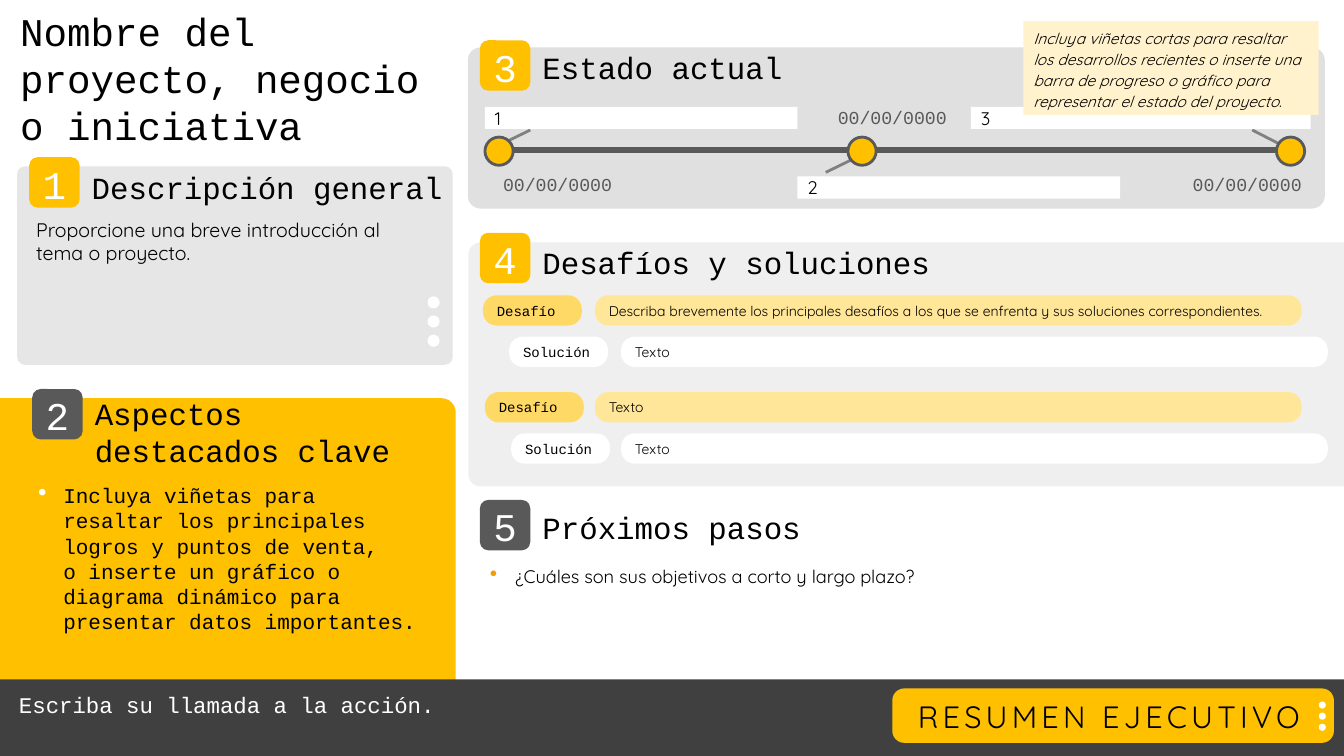
from lxml import etree
from pptx import Presentation
from pptx.dml.color import RGBColor
from pptx.enum import shapes, text
from pptx.oxml.ns import qn

PX = 9144  # 100 px to the inch
MONO, SANS = "Courier New", "Quicksand"
COLORS = {
    "white": "FFFFFF", "black": "000000", "amber": "FFC000", "orange": "F59C00",
    "challenge": "FFD966", "challenge_text": "FFE699", "note": "FFF2CC",
    "bar": "404040", "dark": "595959", "mid": "808080",
    "status": "E0E0E0", "overview": "E7E6E6", "solutions": "EFEFEF",
}
RGB = {name: RGBColor.from_string(value) for name, value in COLORS.items()}
KIND = shapes.MSO_SHAPE
ROUND, RECT, OVAL = KIND.ROUNDED_RECTANGLE, KIND.RECTANGLE, KIND.OVAL
MIDDLE, TOP = text.MSO_ANCHOR.MIDDLE, text.MSO_ANCHOR.TOP
LEFT, CENTER = text.PP_ALIGN.LEFT, text.PP_ALIGN.CENTER

prs = Presentation()
prs.slide_width, prs.slide_height = 1333 * PX, 750 * PX
slide = prs.slides.add_slide(prs.slide_layouts[6])


def block(box, fill=None, kind=RECT, corner=None):
    """Add a filled shape without outline, or a text box when there is no fill."""
    place = [n * PX for n in box]
    if fill is None:
        return slide.shapes.add_textbox(*place)
    shape = slide.shapes.add_shape(kind, *place)
    shape.shadow.inherit = False
    shape.fill.solid()
    shape.fill.fore_color.rgb = RGB[fill]
    shape.line.fill.background()
    if corner is not None:
        shape.adjustments[0] = corner
    return shape


def write(shape, words, size, font=MONO, color="black", align=LEFT, anchor=TOP,
          margins=(10, 5, 10, 5), spacing=None, bullet=None):
    """Fill the shape with one paragraph; margins are left, top, right, bottom."""
    frame = shape.text_frame
    frame.word_wrap = True
    frame.vertical_anchor = anchor
    (frame.margin_left, frame.margin_top,
     frame.margin_right, frame.margin_bottom) = [n * PX for n in margins]
    para = frame.paragraphs[0]
    para.text = words
    para.alignment = align
    if bullet:
        para.space_after = 6 * 12700
        props = para._p.get_or_add_pPr()
        props.set("marL", str(25 * PX))
        props.set("indent", str(-25 * PX))
        tint = etree.SubElement(props, qn("a:buClr"))
        etree.SubElement(tint, qn("a:srgbClr")).set("val", COLORS[bullet])
        etree.SubElement(props, qn("a:buSzPct")).set("val", "120000")
        etree.SubElement(props, qn("a:buChar")).set("char", "•")
    para.font.size = size * 12700
    para.font.name = font
    para.font.color.rgb = RGB[color]
    if spacing:
        para.runs[0]._r.get_or_add_rPr().set("spc", str(spacing * 100))
    return para


# Panels
solutions = block((778, -73, 242, 869), "solutions", KIND.ROUND_2_SAME_RECTANGLE, 0.05)
solutions.rotation = 270
block((464, 47, 850, 160), "status", ROUND, 0.08)
block((0, 395, 452, 355), "amber", KIND.ROUND_1_RECTANGLE, 0.04)
block((17, 165, 432, 197), "overview", ROUND, 0.04)
block((0, 674, 1333, 76), "bar")
block((885, 683, 438, 54), "amber", ROUND, 0.22)

for left, top, size, step in [(1308, 696, 7, 11), (424, 294, 12, 19)]:
    for i in range(3):
        block((left, top + i * step, size, size), "white", OVAL)

# Title and footer
write(block((20, 7, 404, 126)), "Nombre del proyecto, negocio o iniciativa", 28,
      margins=(0, 0, 0, 0))
write(block((9, 681, 836, 37)), "Escriba su llamada a la acción.", 16, color="white")
write(block((885, 687, 430, 47)), "RESUMEN EJECUTIVO", 22, SANS, align=CENTER, spacing=3)

# Section numbers and headings
sections = [
    (29, 156, "amber", "Descripción general", 168, 385),
    (32, 386, "dark", "Aspectos destacados clave", 410, 342),
    (476, 40, "amber", "Estado actual", 49, 411),
    (476, 231, "amber", "Desafíos y soluciones", 242, 573),
    (476, 496, "dark", "Próximos pasos", 505, 321),
]
for number, (left, top, fill, heading, heading_top, width) in enumerate(sections, 1):
    write(block((left, top, 50, 50), fill, ROUND), str(number), 28, color="white",
          align=CENTER, anchor=MIDDLE, margins=(0, 2, 0, 0), spacing=-3)
    write(block((left + 62, heading_top, width, 36)), heading, 22,
          anchor=MIDDLE, margins=(0, 0, 0, 0))

# Section bodies
write(block((26, 211, 389, 57)),
      "Proporcione una breve introducción al tema o proyecto.", 14, SANS)
write(block((28, 474, 396, 162)),
      "Incluya viñetas para resaltar los principales logros y puntos de venta, \n"
      "o inserte un gráfico o diagrama dinámico para presentar datos importantes.",
      15, bullet="white")
write(block((476, 556, 845, 32)),
      "¿Cuáles son sus objetivos a corto y largo plazo?", 13, SANS, bullet="orange")

# Timeline
for x1, y1, x2, y2, color, weight in [
    (1281, 149, 1242, 129, "mid", 2),
    (819, 171, 858, 152, "mid", 2),
    (487, 148, 526, 129, "mid", 2),
    (494, 149, 1290, 149, "dark", 4),
]:
    line = slide.shapes.add_connector(
        shapes.MSO_CONNECTOR.STRAIGHT, *[n * PX for n in (x1, y1, x2, y2)])
    line.line.color.rgb = RGB[color]
    line.line.width = weight * 12700
    etree.SubElement(line._element.spPr, qn("a:effectLst"))

milestones = [
    (481, (476, 167), (481, 106, 310)),
    (841, (808, 101), (791, 175, 320)),
    (1266, (1160, 167), (963, 106, 337)),
]
for number, (marker_left, date_at, (left, top, width)) in enumerate(milestones, 1):
    marker = block((marker_left, 136, 28, 28), "amber", OVAL)
    marker.line.color.rgb = RGB["dark"]
    marker.line.width = 2 * 12700
    write(block((*date_at, 154, 32)), "00/00/0000", 13, color="dark", align=CENTER)
    write(block((left, top, width, 22), "white"), str(number), 13, SANS,
          anchor=MIDDLE, margins=(10, 0, 10, 0))

# Challenges and solutions
challenges = [
    (293, 479, "Describa brevemente los principales desafíos a los que se enfrenta "
               "y sus soluciones correspondientes."),
    (389, 481, "Texto"),
]
for top, left, challenge in challenges:
    for dx, dy, label, label_fill, words, words_fill in [
        (0, 0, "Desafío", "challenge", challenge, "challenge_text"),
        (26, 41, "Solución", "white", "Texto", "white"),
    ]:
        for x, width, fill, content, font in [
            (left, 98, label_fill, label, MONO),
            (590, 701, words_fill, words, SANS),
        ]:
            write(block((x + dx, top + dy, width, 30), fill, ROUND, 0.45), content,
                  10, font, anchor=MIDDLE, margins=(10, 0, 0, 0))

# Note
note = write(block((1015, 21, 293, 93), "note"),
             "Incluya viñetas cortas para resaltar los desarrollos recientes o inserte una "
             "barra de progreso o gráfico para representar el estado del proyecto.", 11, SANS)
note.line_spacing = 1.15
note.font.italic = True

prs.save("out.pptx")
